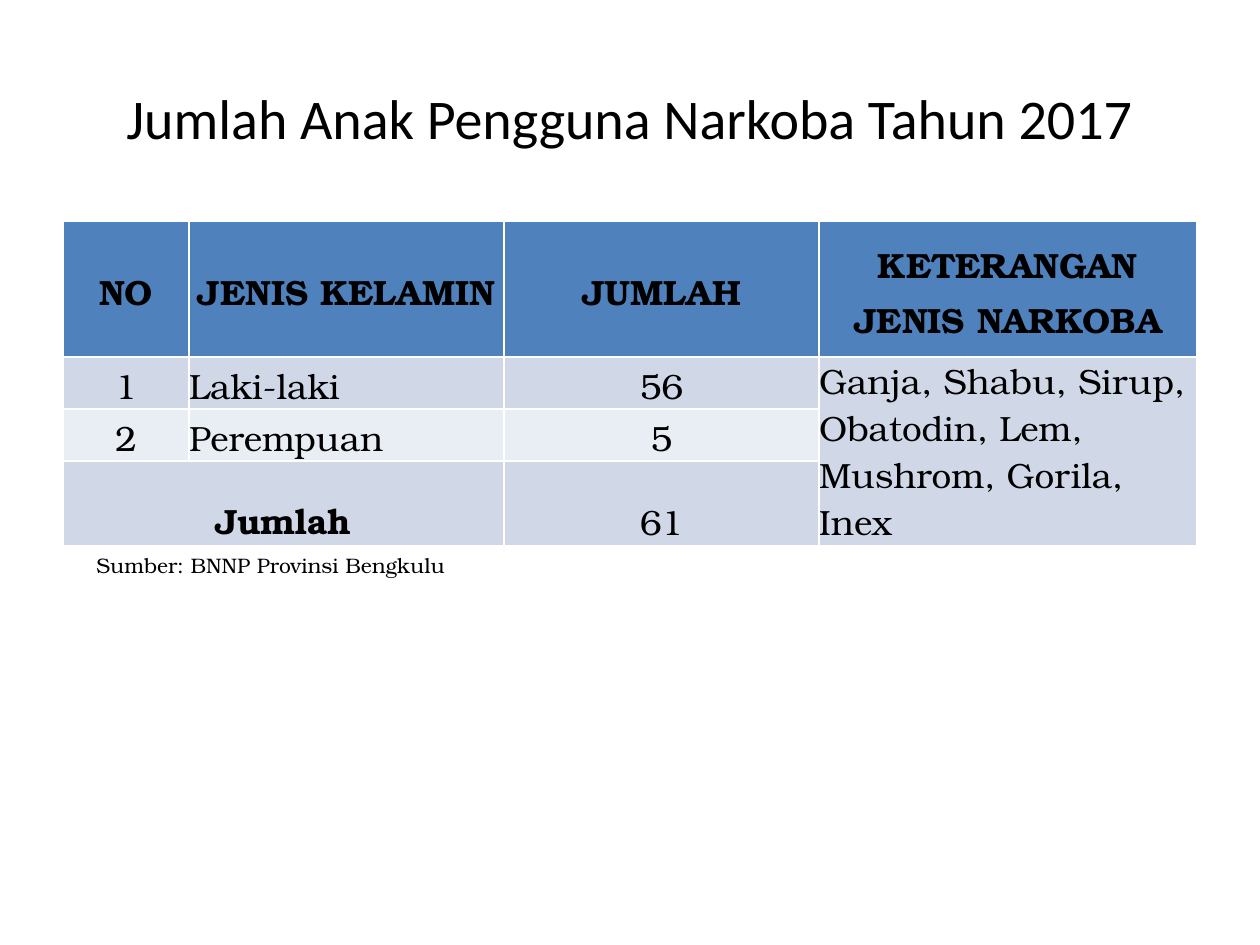
from pptx import Presentation
from pptx.dml.color import RGBColor
from pptx.enum.text import MSO_ANCHOR, PP_ALIGN
from pptx.util import Pt

LEFT, CENTER = PP_ALIGN.LEFT, PP_ALIGN.CENTER
TOP, MIDDLE, BOTTOM = MSO_ANCHOR.TOP, MSO_ANCHOR.MIDDLE, MSO_ANCHOR.BOTTOM
SERIF = "TeX Gyre Bonum"
BLACK, HEAD, BANDS = "000000", "4F81BD", ("E9EDF4", "D0D8E8")

COLS = (126, 315, 315, 378)
ROWS = (136, 52, 52, 52)
DATA = (
    ("NO", "JENIS KELAMIN", "JUMLAH", "KETERANGAN JENIS NARKOBA"),
    ("1", "Laki-laki", "56",
     "Ganja, Shabu, Sirup, Obatodin, Lem, Mushrom, Gorila, Inex"),
    ("2", "Perempuan", "5", ""),
    ("Jumlah", "", "61", ""),
)


def px(n):
    return round(n * 914400 / 126)


def color(code):
    return RGBColor.from_string(code)


def style(para, size, face, bold=False, align=LEFT):
    para.alignment = align
    font = para.font
    font.size, font.name, font.bold = Pt(size), face, bold
    font.color.rgb = color(BLACK)


def add_title(slide, text):
    title = slide.shapes.title
    title.left, title.top = px(63), px(38)
    title.width, title.height = px(1134), px(158)
    frame = title.text_frame
    frame.text = text
    frame.vertical_anchor = MIDDLE
    style(frame.paragraphs[0], 32, "Calibri", align=CENTER)


def fill_cell(cell, text, row, col):
    head, total = row == 0, row == 3 and col == 0
    cell.margin_left = cell.margin_right = 0
    cell.margin_top = cell.margin_bottom = 0
    cell.fill.solid()
    cell.fill.fore_color.rgb = color(HEAD if head else BANDS[row % 2])
    cell.vertical_anchor = MIDDLE if head else TOP if col == 3 else BOTTOM
    if not text:
        return
    cell.text = text
    para = cell.text_frame.paragraphs[0]
    mid = head or col in (0, 2)
    style(para, 20, SERIF, head or total, CENTER if mid else LEFT)
    if head:
        para.line_spacing = 1.08


def add_grid(slide):
    table = slide.shapes.add_table(
        len(ROWS), len(COLS), px(63), px(221), px(sum(COLS)), px(sum(ROWS))
    ).table
    for col, width in zip(table.columns, COLS):
        col.width = px(width)
    for row, height in zip(table.rows, ROWS):
        row.height = px(height)

    # Drug list spans the body rows, the total label spans two columns
    table.cell(1, 3).merge(table.cell(3, 3))
    table.cell(3, 0).merge(table.cell(3, 1))
    for r, texts in enumerate(DATA):
        for c, text in enumerate(texts):
            fill_cell(table.cell(r, c), text, r, c)


def add_note(slide, text):
    box = slide.shapes.add_textbox(px(84), px(546), px(379), px(38))
    frame = box.text_frame
    frame.word_wrap = False
    frame.text = text
    style(frame.paragraphs[0], 12, SERIF)


def main():
    deck = Presentation()
    deck.slide_width, deck.slide_height = px(1260), px(945)
    slide = deck.slides.add_slide(deck.slide_layouts[5])  # title only
    add_title(slide, "Jumlah Anak Pengguna Narkoba Tahun 2017")
    add_grid(slide)
    add_note(slide, "Sumber: BNNP Provinsi Bengkulu")
    deck.save("out.pptx")


if __name__ == "__main__":
    main()
